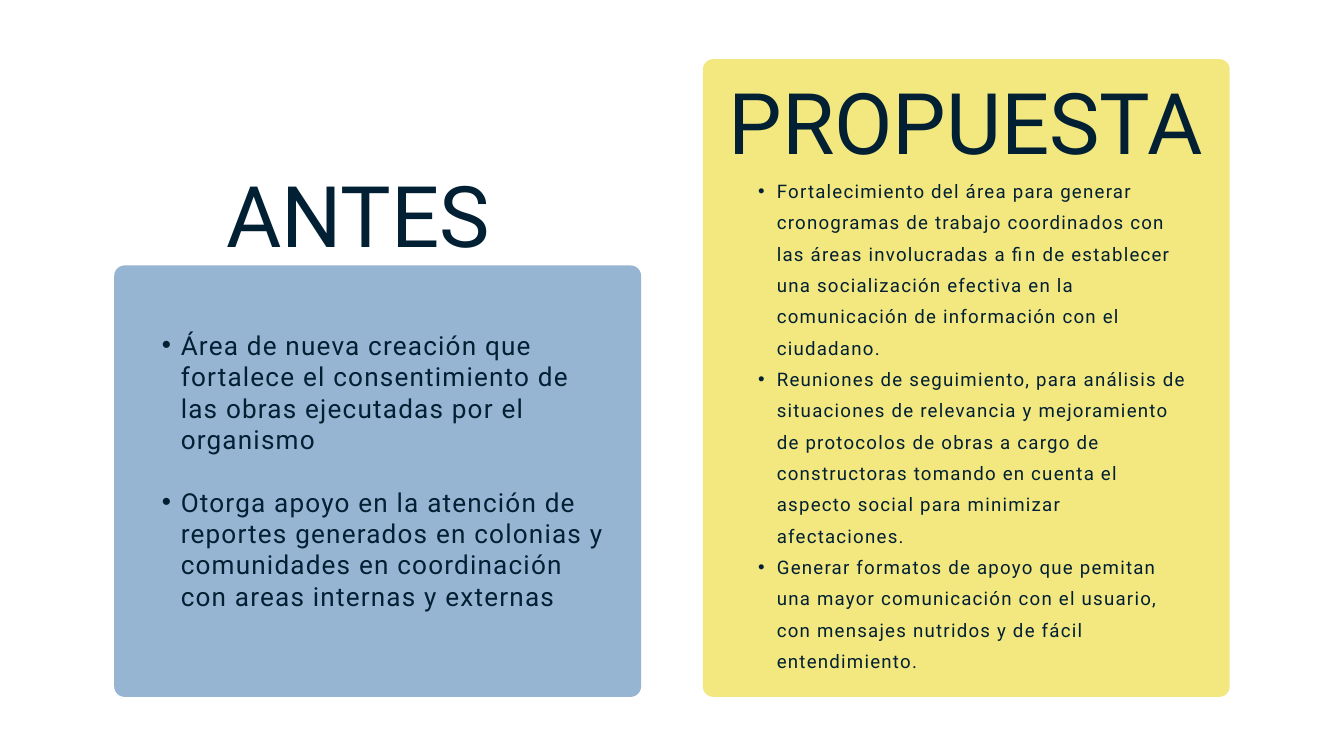
"""Build the slide that sets the earlier situation beside the proposal."""
from lxml import etree
from pptx import Presentation
from pptx import util as u
from pptx.dml.color import RGBColor
from pptx.enum import shapes, text
from pptx.oxml.ns import qn

PX = 9144  # 100 px to the inch
RADIUS = 15.5
COLORS = {"blue": "96B5D3", "yellow": "F3E780", "ink": "022033"}


def add_text_frame(slide, box):
    frame = slide.shapes.add_textbox(*[v * PX for v in box]).text_frame
    frame.margin_left = frame.margin_top = frame.margin_right = frame.margin_bottom = 0
    frame.word_wrap = True
    frame.auto_size = text.MSO_AUTO_SIZE.SHAPE_TO_FIT_TEXT
    return frame


def add_run(paragraph, words, size, leading):
    paragraph.line_spacing = u.Pt(leading)
    run = paragraph.add_run()
    run.text = words
    run.font.size = u.Pt(size)
    run.font.name = "Roboto"
    run.font.color.rgb = RGBColor.from_string(COLORS["ink"])
    return run


columns = [
    {
        "title": "ANTES", "title_box": (214, 277, 638, 120),
        "panel": (170, 395, 784, 642), "color": "blue",
        "list_box": (212, 490, 698, 475), "size": 28, "gap": 33.6,
        "points": [
            "Área de nueva creación que fortalece el consentimiento de las obras ejecutadas por el organismo",
            "Otorga apoyo en la atención de reportes generados en colonias y comunidades en coordinación "
            "con areas internas y externas",
        ],
    },
    {
        "title": "PROPUESTA", "title_box": (1068, 139, 738, 120),
        "panel": (1046, 88, 784, 949), "color": "yellow",
        "list_box": (1099, 254, 677, 758), "size": 20, "gap": 0,
        "points": [
            "Fortalecimiento del área para generar cronogramas de trabajo coordinados con las áreas "
            "involucradas a fin de establecer una socialización efectiva en la comunicación de "
            "información con el ciudadano.",
            "Reuniones de seguimiento, para análisis de situaciones de relevancia y mejoramiento de "
            "protocolos de obras a cargo de constructoras tomando en cuenta el aspecto social para "
            "minimizar afectaciones.",
            "Generar formatos de apoyo que pemitan una mayor comunicación con el usuario, con mensajes "
            "nutridos y de fácil entendimiento.",
        ],
    },
]

prs = Presentation()
prs.slide_width, prs.slide_height = 2000 * PX, 1125 * PX
slide = prs.slides.add_slide(prs.slide_layouts[6])

for column in columns:
    panel = slide.shapes.add_shape(
        shapes.MSO_SHAPE.ROUNDED_RECTANGLE, *[v * PX for v in column["panel"]])
    panel.adjustments[0] = RADIUS / min(column["panel"][2:])
    panel.shadow.inherit = False
    panel.fill.solid()
    panel.fill.fore_color.rgb = RGBColor.from_string(COLORS[column["color"]])
    panel.line.fill.background()

    heading = add_text_frame(slide, column["title_box"]).paragraphs[0]
    heading.alignment = text.PP_ALIGN.CENTER
    add_run(heading, column["title"], 91, 83.7)

for column in columns:
    points = add_text_frame(slide, column["list_box"])
    for i, words in enumerate(column["points"]):
        point = points.add_paragraph() if i else points.paragraphs[0]
        point.level = 1
        point.alignment = text.PP_ALIGN.LEFT
        run = add_run(point, words, column["size"], 33.6)
        run._r.get_or_add_rPr().set("spc", "130")
        if i:
            point.space_before = u.Pt(column["gap"])
        props = point._p.get_or_add_pPr()
        props.set("marL", str(57 * PX))
        props.set("indent", str(-28 * PX))
        etree.SubElement(props, qn("a:buFont")).set("typeface", "Arial")
        etree.SubElement(props, qn("a:buChar")).set("char", "•")

prs.save("out.pptx")
